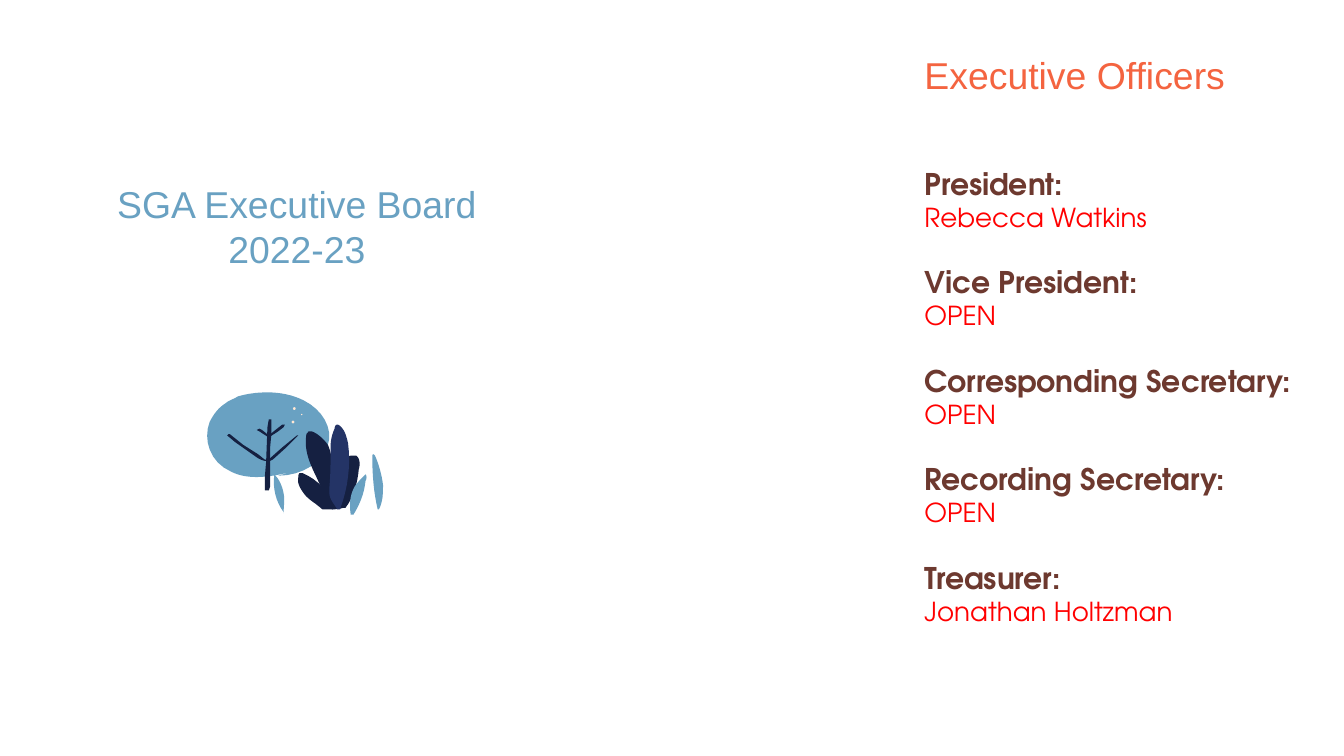
import pptx
import pptx.dml.color
import pptx.enum.shapes
import pptx.enum.text
import pptx.util

Inches = pptx.util.Inches
SKY, NAVY, INDIGO, CREAM = "69A1C2", "152041", "243466", "FFE7D4"
CORAL, BROWN, RED = "F46440", "6D392F", "FF0000"
CURVE_STEPS = 8

OFFICERS = [
    ("President:", "Rebecca Watkins"),
    ("Vice President:", "OPEN"),
    ("Corresponding Secretary:", "OPEN"),
    ("Recording Secretary:", "OPEN"),
    ("Treasurer:", "Jonathan Holtzman"),
]

CROWN = [
    (1.99, 2.92), (1.91, 2.92, 1.84, 2.93, 1.77, 2.95), (1.74, 2.97, 1.7, 2.98, 1.68, 3),
    (1.63, 3.03, 1.59, 3.08, 1.56, 3.14), (1.51, 3.27, 1.56, 3.44, 1.72, 3.51),
    (1.78, 3.54, 1.84, 3.55, 1.91, 3.55), (2, 3.55, 2.09, 3.53, 2.18, 3.51), (2.07, 3.54),
    (2.25, 3.54, 2.4, 3.44, 2.44, 3.31), (2.48, 3.19, 2.4, 3.05, 2.26, 2.98),
    (2.18, 2.94, 2.09, 2.92, 1.99, 2.92),
]
TRUNK = [
    (2.01, 3.12), (2, 3.12), (1.99, 3.18), (1.98, 3.44), (1.97, 3.55), (1.97, 3.65),
    (1.99, 3.65), (2, 3.65), (2.01, 3.62), (2.01, 3.33), (2.02, 3.22), (2.02, 3.12),
]
LOWER_BRANCHES = [
    (1.7, 3.23), (1.69, 3.24), (1.75, 3.29), (1.92, 3.41), (1.94, 3.42, 1.96, 3.43, 1.98, 3.43),
    (1.99, 3.44), (2.03, 3.42), (2.13, 3.33), (2.22, 3.24), (2.21, 3.24), (2.1, 3.33),
    (2.01, 3.41), (1.99, 3.42), (1.97, 3.42), (1.92, 3.38), (1.81, 3.31), (1.71, 3.23),
]
UPPER_BRANCHES = [
    (2.12, 3.16), (2.1, 3.16), (2.05, 3.2), (2, 3.24), (1.95, 3.2), (1.93, 3.19), (1.91, 3.2),
    (1.93, 3.21), (1.99, 3.25), (2, 3.26), (2.01, 3.25), (2.07, 3.21), (2.11, 3.18),
]
RIGHT_FROND = [
    (2.62, 3.39), (2.59, 3.39, 2.56, 3.41, 2.55, 3.43), (2.5, 3.49, 2.48, 3.55, 2.48, 3.62),
    (2.47, 3.68, 2.47, 3.73, 2.47, 3.79), (2.5, 3.79, 2.52, 3.79, 2.55, 3.78), (2.57, 3.78),
    (2.63, 3.7, 2.66, 3.6, 2.67, 3.49), (2.68, 3.46, 2.68, 3.41, 2.65, 3.39),
]
LEFT_FROND = [
    (2.31, 3.21), (2.3, 3.21, 2.29, 3.21, 2.29, 3.22), (2.28, 3.23),
    (2.26, 3.34, 2.3, 3.44, 2.35, 3.54), (2.46, 3.78), (2.5, 3.78),
    (2.5, 3.68, 2.5, 3.57, 2.48, 3.47), (2.47, 3.41, 2.46, 3.36, 2.44, 3.31),
    (2.41, 3.27, 2.37, 3.23, 2.32, 3.21),
]
MIDDLE_FROND = [
    (2.51, 3.16), (2.5, 3.16, 2.49, 3.17, 2.49, 3.19), (2.47, 3.23, 2.46, 3.28, 2.46, 3.32),
    (2.46, 3.43, 2.46, 3.54, 2.45, 3.64), (2.45, 3.67, 2.45, 3.7, 2.47, 3.73), (2.51, 3.79),
    (2.53, 3.79), (2.59, 3.63, 2.61, 3.46, 2.59, 3.3), (2.58, 3.26, 2.57, 3.21, 2.54, 3.18),
    (2.53, 3.17, 2.52, 3.16, 2.51, 3.16),
]
LOW_FROND = [
    (2.24, 3.52), (2.23, 3.52), (2.22, 3.53, 2.22, 3.54, 2.22, 3.55),
    (2.21, 3.59, 2.23, 3.63, 2.26, 3.67), (2.28, 3.7, 2.32, 3.73, 2.35, 3.75), (2.4, 3.79),
    (2.48, 3.79), (2.48, 3.78), (2.46, 3.67, 2.37, 3.57, 2.25, 3.52),
]
LEFT_LEAF = [
    (2.04, 3.53), (2.04, 3.54), (2.03, 3.63, 2.05, 3.73, 2.11, 3.81), (2.11, 3.82),
    (2.11, 3.77, 2.12, 3.72, 2.11, 3.67), (2.1, 3.62, 2.08, 3.57, 2.05, 3.54),
]
MIDDLE_LEAF = [
    (2.72, 3.53), (2.69, 3.56, 2.66, 3.59, 2.64, 3.62), (2.6, 3.69, 2.6, 3.76, 2.61, 3.83),
    (2.63, 3.83), (2.68, 3.75, 2.71, 3.67, 2.72, 3.58), (2.73, 3.56, 2.73, 3.54, 2.72, 3.53),
]
RIGHT_LEAF = [
    (2.78, 3.38), (2.77, 3.38, 2.77, 3.39, 2.77, 3.4), (2.77, 3.53, 2.78, 3.66, 2.81, 3.79),
    (2.82, 3.79), (2.85, 3.73, 2.85, 3.67, 2.85, 3.61), (2.84, 3.53, 2.82, 3.46, 2.79, 3.39),
]
TREE = [(CROWN, SKY), (TRUNK, NAVY), (LOWER_BRANCHES, NAVY), (UPPER_BRANCHES, NAVY)]
BUSH = [
    (RIGHT_FROND, NAVY), (LEFT_FROND, NAVY), (MIDDLE_FROND, INDIGO), (LOW_FROND, NAVY),
    (LEFT_LEAF, SKY), (MIDDLE_LEAF, SKY), (RIGHT_LEAF, SKY),
]
BERRIES = [(2.24, 3.08, 0.01), (2.18, 3.03, 0.02), (2.17, 3.13, 0.02)]


def rgb(color):
    """Turn a hex string into a colour."""
    return pptx.dml.color.RGBColor.from_string(color)


def paint(shape, color):
    """Give a shape a plain fill without line or shadow."""
    shape.fill.solid()
    shape.fill.fore_color.rgb = rgb(color)
    shape.line.fill.background()
    shape.shadow.inherit = False


def trace(outline):
    """List the points along an outline of lines and cubic curves."""
    points = [outline[0]]
    for segment in outline[1:]:
        if len(segment) == 2:
            points.append(segment)
            continue
        x0, y0 = points[-1]
        x1, y1, x2, y2, x3, y3 = segment
        for step in range(1, CURVE_STEPS + 1):
            t = step / CURVE_STEPS
            a, b, c, d = (1 - t) ** 3, 3 * t * (1 - t) ** 2, 3 * t * t * (1 - t), t ** 3
            points.append((a * x0 + b * x1 + c * x2 + d * x3,
                           a * y0 + b * y1 + c * y2 + d * y3))
    return points


def add_plant_part(shapes, outline, color):
    """Draw one closed part of a plant."""
    points = [(Inches(x), Inches(y)) for x, y in trace(outline)]
    builder = shapes.build_freeform(*points[0])
    builder.add_line_segments(points[1:], close=True)
    paint(builder.convert_to_shape(), color)


def add_berry(shapes, left, top, size):
    """Draw a small round dot in the crown."""
    oval = pptx.enum.shapes.MSO_SHAPE.OVAL
    berry = shapes.add_shape(oval, Inches(left), Inches(top), Inches(size), Inches(size))
    paint(berry, CREAM)


def add_text_frame(shapes, left, top, width, height):
    """Add a wrapping text box with even margins and return its frame."""
    box = shapes.add_textbox(Inches(left), Inches(top), Inches(width), Inches(height))
    frame = box.text_frame
    frame.word_wrap = True
    frame.margin_left = frame.margin_right = Inches(0.1)
    frame.margin_top = frame.margin_bottom = Inches(0.1)
    return frame


def write(paragraph, text, font_name, size, color, bold=False):
    """Fill a paragraph with text in one font."""
    paragraph.text = text
    font = paragraph.font
    font.name, font.size, font.bold = font_name, pptx.util.Pt(size), bold
    font.color.rgb = rgb(color)


def add_heading(shapes, area, text, color, align):
    """Add a heading at the given area."""
    heading = add_text_frame(shapes, *area).paragraphs[0]
    write(heading, text, "Arial", 20, color)
    heading.alignment = align


def add_officers(shapes):
    """List each office with its holder below."""
    frame = add_text_frame(shapes, 6.78, 1.13, 2.99, 3.79)
    for index, (office, holder) in enumerate(OFFICERS):
        office_line = frame.add_paragraph() if index else frame.paragraphs[0]
        write(office_line, office, "TeX Gyre Adventor", 16, BROWN, bold=True)
        if index:
            office_line.space_before = pptx.util.Pt(16.8)
        write(frame.add_paragraph(), holder, "TeX Gyre Adventor", 14, RED)


def main():
    """Build the executive board slide."""
    deck = pptx.Presentation()
    deck.slide_width, deck.slide_height = Inches(10), Inches(10 * 9 / 16)
    shapes = deck.slides.add_slide(deck.slide_layouts[6]).shapes
    align = pptx.enum.text.PP_ALIGN
    add_heading(shapes, (0.48, 1.25, 3.46, 1.11), "SGA Executive Board\v2022-23",
                SKY, align.CENTER)
    for outline, color in TREE:
        add_plant_part(shapes, outline, color)
    for berry in BERRIES:
        add_berry(shapes, *berry)
    for outline, color in BUSH:
        add_plant_part(shapes, outline, color)
    add_heading(shapes, (6.78, 0.29, 2.48, 0.63), "Executive Officers", CORAL, align.LEFT)
    add_officers(shapes)
    deck.save("out.pptx")


if __name__ == "__main__":
    main()
